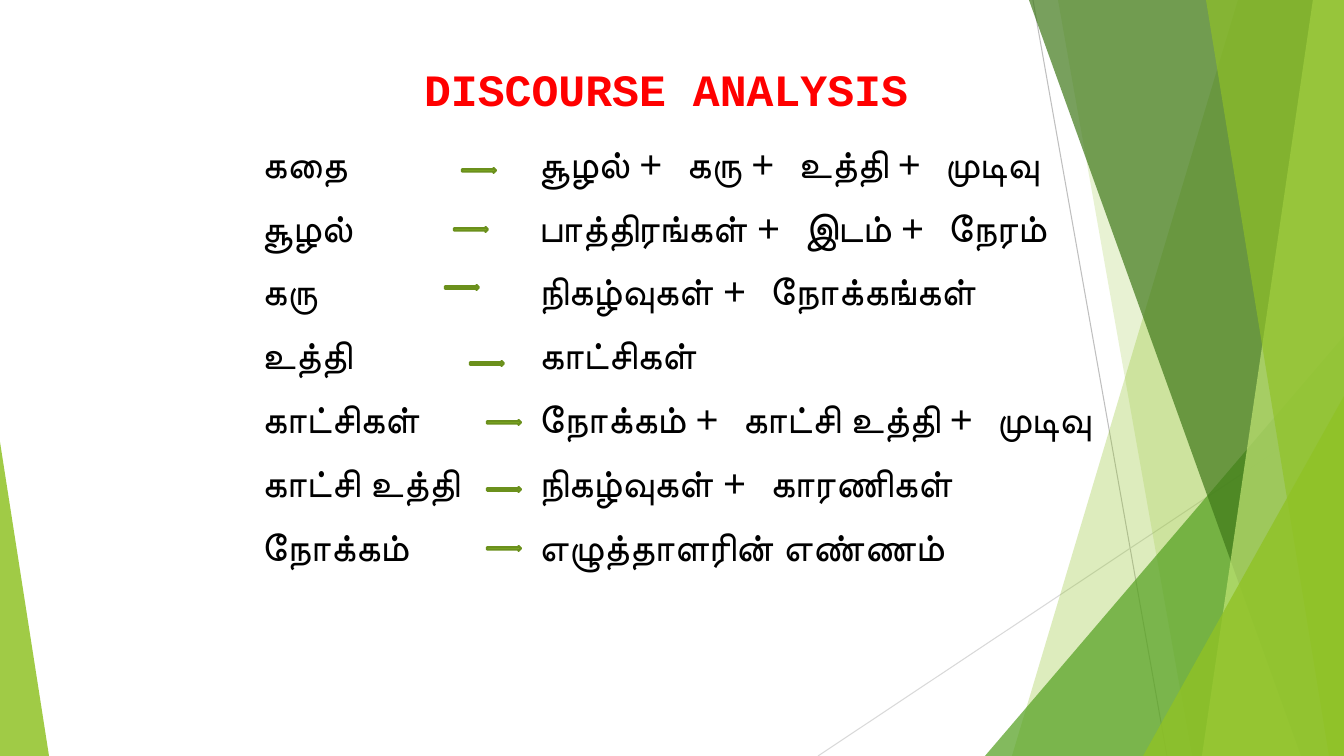
"""Build the Discourse Analysis slide: Tamil story terms, each with an arrow to its parts."""
from dataclasses import dataclass

from lxml.etree import SubElement
from pptx import Presentation
from pptx.dml.color import RGBColor
from pptx.enum.shapes import MSO_CONNECTOR, MSO_SHAPE
from pptx.enum.text import MSO_ANCHOR, MSO_AUTO_SIZE, PP_ALIGN
from pptx.oxml.ns import qn
from pptx.util import Emu, Pt

WIDTH, HEIGHT = 1344, 756
SCALE = 12192000 / WIDTH


@dataclass(frozen=True)
class Theme:
    font: str = "Courier New"
    title_size: int = 32
    body_size: int = 28
    title: str = "FF0000"
    body: str = "000000"
    green: str = "90C226"
    arrow_line: str = "6B901C"
    mid_green: str = "54A021"
    dark_green: str = "3F7819"
    pale_green: str = "C0E474"
    steep_line: str = "BFBFBF"
    flat_line: str = "D9D9D9"


def px(length):
    return Emu(round(length * SCALE))


def write(paragraph, text, size, color, bold=False):
    run = paragraph.add_run()
    run.text = text
    run.font.name = theme.font
    run.font.size = Pt(size)
    run.font.bold = bold
    run.font.color.rgb = RGBColor.from_string(color)


theme = Theme()
presentation = Presentation()
presentation.slide_width, presentation.slide_height = px(WIDTH), px(HEIGHT)
slide = presentation.slides.add_slide(presentation.slide_layouts[5])
shapes = slide.shapes

hairlines = [
    (1033, 0, 1167, HEIGHT, theme.steep_line),
    (WIDTH, 406, 818, HEIGHT, theme.flat_line),
]
for x1, y1, x2, y2, color in hairlines:
    line = shapes.add_connector(MSO_CONNECTOR.STRAIGHT, px(x1), px(y1), px(x2), px(y2))
    line.line.color.rgb = RGBColor.from_string(color)
    line.line.width = Pt(0.75)
    SubElement(line._element.spPr, qn("a:effectLst"))

facets = [
    ("band", (1238, 1012), theme.green, 30),
    ("band", (1058, 1192), theme.green, 20),
    ("triangle", (985, 336, 359, 1), theme.mid_green, 72),
    ("band", (1029, 1301), theme.dark_green, 70),
    ("band", (1313, 1202), theme.pale_green, 70),
    ("band", (1206, 1329), theme.green, 65),
    ("triangle", (1143, 396, 201, 1), theme.green, 80),
    ("triangle", (0, 442, 49, 0), theme.green, 85),
]
for kind, geometry, color, opacity in facets:
    if kind == "band":
        top_x, bottom_x = geometry
        builder = shapes.build_freeform(top_x, 0, scale=SCALE)
        builder.add_line_segments([(WIDTH, 0), (WIDTH, HEIGHT), (bottom_x, HEIGHT)])
        facet = builder.convert_to_shape()
    else:
        left, top, width, apex = geometry
        facet = shapes.add_shape(
            MSO_SHAPE.ISOSCELES_TRIANGLE, px(left), px(top), px(width), px(HEIGHT - top)
        )
        facet.adjustments[0] = apex
    facet.shadow.inherit = False
    facet.line.fill.background()
    facet.fill.solid()
    facet.fill.fore_color.rgb = RGBColor.from_string(color)
    color_element = facet._element.spPr.find(qn("a:solidFill"))[0]
    SubElement(color_element, qn("a:alpha"), val=str(opacity * 1000))

title = shapes.title
title.left, title.top, title.width, title.height = px(414), px(50), px(619), px(78)
title.text_frame.vertical_anchor = MSO_ANCHOR.MIDDLE
title_paragraph = title.text_frame.paragraphs[0]
title_paragraph.alignment = PP_ALIGN.LEFT
write(title_paragraph, "DISCOURSE ANALYSIS", theme.title_size, theme.title, bold=True)

terms = [
    ("கதை", "சூழல் + கரு + உத்தி + முடிவு", 462, 168),
    ("சூழல்", "பாத்திரங்கள் + இடம் + நேரம்", 454, 227),
    ("கரு", "நிகழ்வுகள் + நோக்கங்கள்", 445, 285),
    ("உத்தி", "காட்சிகள்", 470, 361),
    ("காட்சிகள்", "நோக்கம் + காட்சி உத்தி + முடிவு", 487, 420),
    ("காட்சி உத்தி", "நிகழ்வுகள் + காரணிகள்", 487, 487),
    ("நோக்கம்", "எழுத்தாளரின் எண்ணம்", 487, 546),
]
frame = shapes.add_textbox(px(252), px(134), px(865), px(445)).text_frame
frame.word_wrap = True
frame.auto_size = MSO_AUTO_SIZE.SHAPE_TO_FIT_TEXT
for index, (term, parts, arrow_left, arrow_top) in enumerate(terms):
    paragraph = frame.add_paragraph() if index else frame.paragraphs[0]
    paragraph.space_after = Pt(12)
    tabs = SubElement(paragraph._p.get_or_add_pPr(), qn("a:tabLst"))
    SubElement(tabs, qn("a:tab"), pos=str(px(277)), algn="l")
    write(paragraph, f"{term}\t{parts}", theme.body_size, theme.body)

    arrow = shapes.add_shape(
        MSO_SHAPE.RIGHT_ARROW, px(arrow_left), px(arrow_top), px(34), px(5)
    )
    arrow.shadow.inherit = False
    arrow.fill.solid()
    arrow.fill.fore_color.rgb = RGBColor.from_string(theme.green)
    arrow.line.color.rgb = RGBColor.from_string(theme.arrow_line)
    arrow.line.width = Pt(1.5)

presentation.save("out.pptx")
